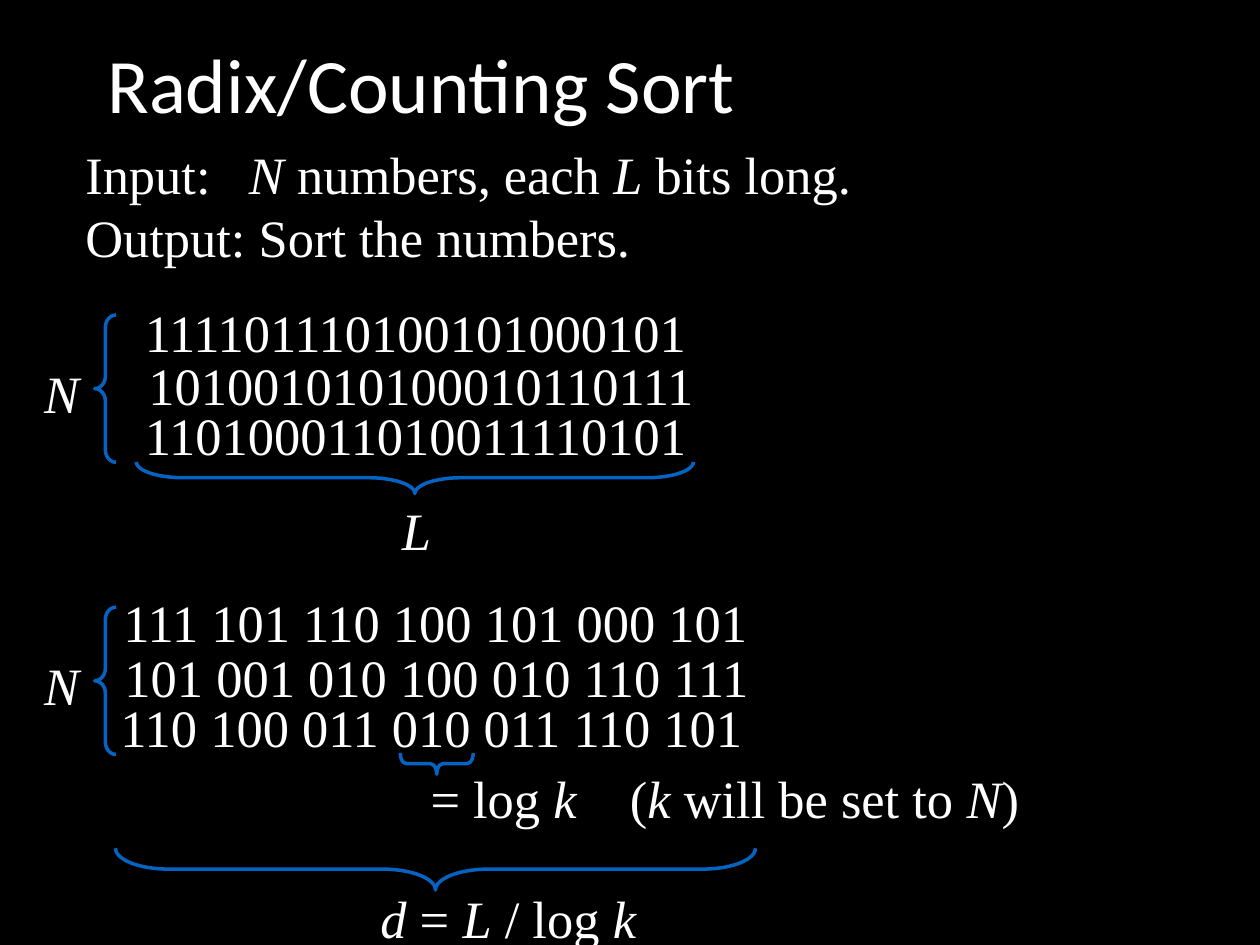
"""Build the Radix/Counting Sort slide."""
from dataclasses import dataclass
from typing import Optional

import pptx
import pptx.dml.color
import pptx.enum.shapes
import pptx.enum.text
import pptx.util
from pptx.util import Cm


@dataclass(frozen=True)
class Theme:
    background: str = "000000"
    text: str = "FFFFFF"
    brace: str = "0563C1"
    title_font: str = "Calibri"
    body_font: str = "Times New Roman"
    title_size: int = 44
    body_size: int = 30
    brace_width: int = 2


@dataclass(frozen=True)
class Label:
    text: str
    left: float
    top: float
    width: float
    height: float = 1.52
    tab: Optional[float] = None


@dataclass(frozen=True)
class Brace:
    left: float
    top: float
    length: float
    depth: float
    points_down: bool = True


THEME = Theme()
ROW_WIDTH, GROUPED_ROW_WIDTH = 11.63, 13.21
BRACKETED_TOPS = (6.35, 12.24)

LABELS = [
    Label("Input:\t*N* numbers, each *L* bits long.\vOutput: Sort the numbers.",
          1.47, 2.74, 15.98, 2.79, tab=3.3),
    Label("111101110100101000101", 2.67, 5.92, ROW_WIDTH),
    Label("101001010100010110111", 2.74, 6.99, ROW_WIDTH),
    Label("110100011010011110101", 2.67, 8.0, ROW_WIDTH),
    Label("*L*", 7.85, 9.91, 1.09),
    Label("111 101 110 100 101 000 101", 2.24, 11.76, GROUPED_ROW_WIDTH),
    Label("101 001 010 100 010 110 111", 2.26, 12.88, GROUPED_ROW_WIDTH),
    Label("110 100 011 010 011 110 101", 2.18, 13.89, GROUPED_ROW_WIDTH),
    Label("= log *k*\t(*k* will be set to *N*)", 8.43, 15.32, 12.37, tab=4.02),
    Label("*d* = *L* / log *k*", 7.42, 17.73, 5.66),
    *(Label("*N*", 0.64, top + 0.8, 1.22) for top in BRACKETED_TOPS),
]

BRACES = [
    *(Brace(1.91, top, 2.97, 0.43, points_down=False) for top in BRACKETED_TOPS),
    Brace(2.75, 9.31, 11.23, 0.64),
    Brace(8.07, 15.18, 1.47, 0.43),
    Brace(2.33, 17.1, 12.9, 0.84),
]


def color(value: str) -> pptx.dml.color.RGBColor:
    """Return the colour for a hexadecimal value."""
    return pptx.dml.color.RGBColor.from_string(value)


def write_text(shape, text: str, *, font: str, size: int, anchor, wrap: bool,
               line_spacing: float = 1.0, space_before: float = 0,
               tab: Optional[float] = None) -> None:
    """Write text in a shape, with starred parts in italics."""
    frame = shape.text_frame
    frame.word_wrap = wrap
    frame.vertical_anchor = anchor
    frame.auto_size = pptx.enum.text.MSO_AUTO_SIZE.NONE
    paragraph = frame.paragraphs[0]
    paragraph.alignment = pptx.enum.text.PP_ALIGN.LEFT
    paragraph.line_spacing = line_spacing
    paragraph.space_before = pptx.util.Pt(space_before)
    if tab is not None:
        tabs = paragraph._p.get_or_add_pPr().makeelement(pptx.oxml.ns.qn("a:tabLst"), {})
        stop = tabs.makeelement(pptx.oxml.ns.qn("a:tab"), {"pos": str(Cm(tab)), "algn": "l"})
        tabs.append(stop)
        paragraph._p.get_or_add_pPr().append(tabs)
    for line_number, line in enumerate(text.split("\v")):
        if line_number:
            paragraph.add_line_break()
        for part_number, part in enumerate(line.split("*")):
            if part:
                run = paragraph.add_run()
                run.text = part
                run.font.name = font
                run.font.size = pptx.util.Pt(size)
                run.font.italic = part_number % 2 == 1
                run.font.color.rgb = color(THEME.text)


def add_title(slide, text: str) -> None:
    """Place and fill the title placeholder."""
    title = slide.shapes.title
    title.left, title.top, title.width, title.height = Cm(1.91), Cm(0.2), Cm(21.59), Cm(3.18)
    write_text(title, text, font=THEME.title_font, size=THEME.title_size, wrap=True,
               anchor=pptx.enum.text.MSO_ANCHOR.MIDDLE, line_spacing=0.9)


def add_label(slide, label: Label) -> None:
    """Add a text box for a label."""
    box = slide.shapes.add_textbox(Cm(label.left), Cm(label.top),
                                   Cm(label.width), Cm(label.height))
    write_text(box, label.text, font=THEME.body_font, size=THEME.body_size, wrap=False,
               anchor=pptx.enum.text.MSO_ANCHOR.TOP, space_before=3, tab=label.tab)


def add_brace(slide, brace: Brace) -> None:
    """Add a brace that points left, or down when rotated about its centre."""
    shift = (brace.length - brace.depth) / 2 if brace.points_down else 0
    shape = slide.shapes.add_shape(
        pptx.enum.shapes.MSO_SHAPE.LEFT_BRACE, Cm(brace.left + shift),
        Cm(brace.top - shift), Cm(brace.depth), Cm(brace.length))
    shape.rotation = 270 if brace.points_down else 0
    shape.adjustments[0] = brace.length / 12 / brace.depth
    shape.shadow.inherit = False
    shape.fill.background()
    shape.line.color.rgb = color(THEME.brace)
    shape.line.width = pptx.util.Pt(THEME.brace_width)


def main() -> None:
    """Create and save the presentation."""
    presentation = pptx.Presentation()
    presentation.slide_width, presentation.slide_height = Cm(25.4), Cm(19.05)
    slide = presentation.slides.add_slide(presentation.slide_layouts[5])
    slide.background.fill.solid()
    slide.background.fill.fore_color.rgb = color(THEME.background)
    add_title(slide, "Radix/Counting Sort")
    for label in LABELS:
        add_label(slide, label)
    for brace in BRACES:
        add_brace(slide, brace)
    presentation.save("out.pptx")


if __name__ == "__main__":
    main()
